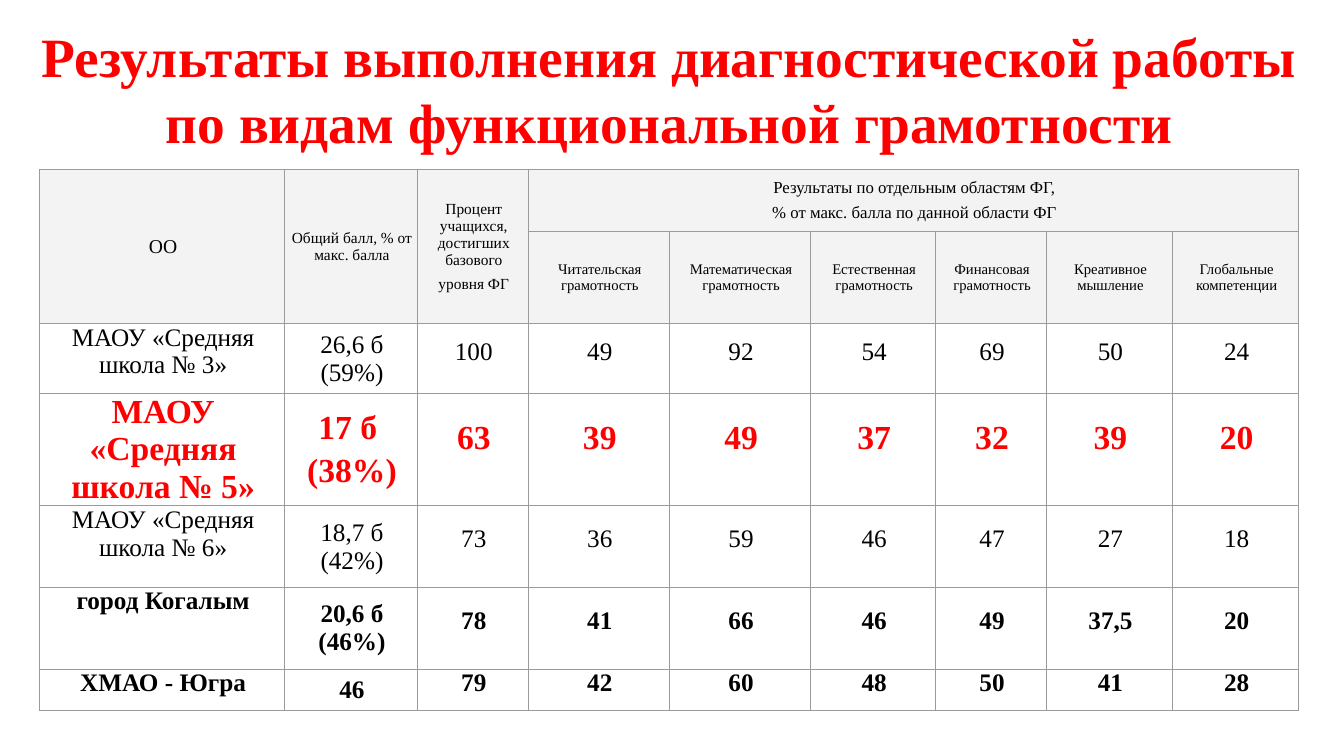
import lxml.etree
import pptx
import pptx.dml.color
import pptx.enum.text
import pptx.oxml.ns
import pptx.util

Cm = pptx.util.Cm
Pt = pptx.util.Pt
RGBColor = pptx.dml.color.RGBColor
CENTER = pptx.enum.text.PP_ALIGN.CENTER
TOP = pptx.enum.text.MSO_ANCHOR.TOP
MIDDLE = pptx.enum.text.MSO_ANCHOR.MIDDLE

RED = RGBColor(0xFF, 0x00, 0x00)
BLACK = RGBColor(0x00, 0x00, 0x00)
WHITE = RGBColor(0xFF, 0xFF, 0xFF)
HEADER_GRAY = RGBColor(0xF3, 0xF3, 0xF3)
BORDER_GRAY = RGBColor(0x9B, 0x9B, 0x9B)
FONT_NAME = "Times New Roman"


def format_text(paragraph, size, color, bold):
    paragraph.alignment = CENTER
    font = paragraph.font
    for run in paragraph.runs:
        font = run.font
        for name, value in {"name": FONT_NAME, "size": Pt(size), "bold": bold}.items():
            setattr(font, name, value)
        font.color.rgb = color


def fill_cell(cell, text, size, color, bold, background, anchor, line_spacing):
    cell.fill.solid()
    cell.fill.fore_color.rgb = background
    cell.vertical_anchor = anchor
    for side in ("left", "top", "right", "bottom"):
        setattr(cell, f"margin_{side}", 0)
    cell.text = text
    for paragraph in cell.text_frame.paragraphs:
        format_text(paragraph, size, color, bold)
        paragraph.space_before = Pt(4.3)
        paragraph.line_spacing = line_spacing
        paragraph._p.get_or_add_pPr().set("marL", str(Cm(0.05)))
    properties = cell._tc.get_or_add_tcPr()
    for position, tag in enumerate(("a:lnL", "a:lnR", "a:lnT", "a:lnB")):
        border = lxml.etree.Element(pptx.oxml.ns.qn(tag), w=str(Pt(1)))
        solid = lxml.etree.SubElement(border, pptx.oxml.ns.qn("a:solidFill"))
        lxml.etree.SubElement(solid, pptx.oxml.ns.qn("a:srgbClr"), val=str(BORDER_GRAY))
        properties.insert(position, border)


presentation = pptx.Presentation()
presentation.slide_width = Cm(33.87)
presentation.slide_height = Cm(19.05)
slide = presentation.slides.add_slide(presentation.slide_layouts[5])

title = slide.shapes.title
title_box = {"left": Cm(0.56), "top": Cm(0.64), "width": Cm(32.61), "height": Cm(3.18)}
for name, value in title_box.items():
    setattr(title, name, value)
title.text_frame.text = (
    "Результаты выполнения диагностической работы по видам функциональной грамотности"
)
title_format = {
    "word_wrap": True,
    "auto_size": pptx.enum.text.MSO_AUTO_SIZE.NONE,
    "vertical_anchor": MIDDLE,
}
for name, value in title_format.items():
    setattr(title.text_frame, name, value)
format_text(title.text_frame.paragraphs[0], 39.6, RED, True)

column_widths = [6.17, 3.35, 2.79, 3.56, 3.56, 3.15, 2.79, 3.18, 3.18]
row_heights = [1.57, 2.31, 1.77, 2.82, 2.06, 2.06, 1.04]
table = slide.shapes.add_table(
    len(row_heights), len(column_widths),
    Cm(1), Cm(4.27), Cm(sum(column_widths)), Cm(sum(row_heights)),
).table
for column, width in zip(table.columns, column_widths):
    column.width = Cm(width)
for row, height in zip(table.rows, row_heights):
    row.height = Cm(height)

headers = [
    [
        ("ОО", 14),
        ("Общий балл, % от макс. балла", 11),
        ("Процент учащихся, достигших базового\nуровня ФГ", 11),
        ("Результаты по отдельным областям ФГ,\n% от макс. балла по данной области ФГ", 12),
    ] + [("", 12)] * 5,
    [("", 11)] * 3 + [
        ("Читательская грамотность", 10.5),
        ("Математическая грамотность", 10.5),
        ("Естественная грамотность", 10.5),
        ("Финансовая грамотность", 10.5),
        ("Креативное мышление", 10.5),
        ("Глобальные компетенции", 10.5),
    ],
]
for row_index, header_row in enumerate(headers):
    for column_index, (text, size) in enumerate(header_row):
        cell = table.cell(row_index, column_index)
        fill_cell(cell, text, size, BLACK, False, HEADER_GRAY, MIDDLE, None)
for column_index in range(3):
    table.cell(0, column_index).merge(table.cell(1, column_index))
table.cell(0, 3).merge(table.cell(0, 8))

results = [
    (18, BLACK, False, ["МАОУ «Средняя школа № 3»", "26,6 б (59%)",
                        "100", "49", "92", "54", "69", "50", "24"]),
    (24, RED, True, ["МАОУ «Средняя школа № 5»", "17 б \n(38%)",
                     "63", "39", "49", "37", "32", "39", "20"]),
    (18, BLACK, False, ["МАОУ «Средняя школа № 6»", "18,7 б (42%)",
                        "73", "36", "59", "46", "47", "27", "18"]),
    (18, BLACK, True, ["город Когалым", "20,6 б (46%)",
                       "78", "41", "66", "46", "49", "37,5", "20"]),
    (18, BLACK, True, ["ХМАО - Югра", "46",
                       "79", "42", "60", "48", "50", "41", "28"]),
]
for row_index, (size, color, bold, values) in enumerate(results, start=2):
    for column_index, text in enumerate(values):
        anchor = TOP if column_index == 0 else MIDDLE
        line_spacing = Pt(9.6) if column_index >= 2 else None
        cell = table.cell(row_index, column_index)
        fill_cell(cell, text, size, color, bold, WHITE, anchor, line_spacing)

presentation.save("out.pptx")
